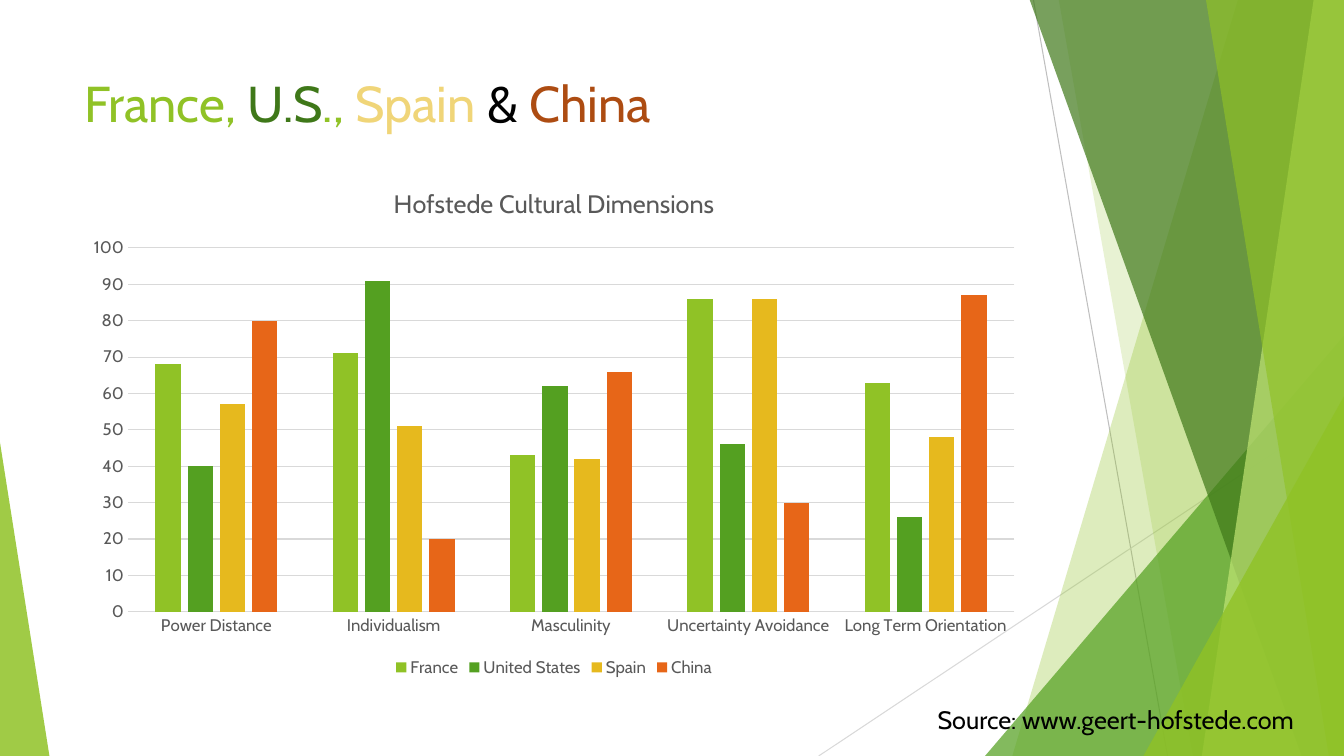
"""Build a slide comparing Hofstede cultural dimensions of four countries."""
from lxml.etree import SubElement
from pptx import Presentation
from pptx.chart.data import CategoryChartData
from pptx.dml.color import RGBColor
from pptx.enum.chart import XL_CHART_TYPE as ChartType
from pptx.enum.chart import XL_LEGEND_POSITION as LegendPosition
from pptx.enum.chart import XL_TICK_MARK as TickMark
from pptx.enum.shapes import MSO_CONNECTOR as Connector
from pptx.enum.shapes import MSO_SHAPE as Shape
from pptx.enum.text import MSO_ANCHOR as Anchor
from pptx.oxml.ns import qn
from pptx.util import Inches, Pt

FONT = "Cabin"
WIDTH, HEIGHT = 13.33, 7.5
GREEN, GRASS, FOREST = "90C226", "54A021", "3F7819"
GREY, PALE_GREY = "595959", "D9D9D9"


def rgb(value):
    return RGBColor.from_string(value)


def style_font(font, size, color):
    font.name = FONT
    font.size = Pt(size)
    font.bold = False
    font.color.rgb = rgb(color)


deck = Presentation()
deck.slide_width, deck.slide_height = Inches(WIDTH), Inches(HEIGHT)
slide = deck.slides.add_slide(deck.slide_layouts[6])
shapes = slide.shapes

hairlines = [
    (10.25, 0, 11.58, HEIGHT, "BFBFBF"),
    (WIDTH, 4.03, 8.12, HEIGHT, PALE_GREY),
]
for x1, y1, x2, y2, color in hairlines:
    hairline = shapes.add_connector(
        Connector.STRAIGHT, Inches(x1), Inches(y1), Inches(x2), Inches(y2))
    hairline.line.color.rgb = rgb(color)
    hairline.line.width = Pt(0.75)
    SubElement(hairline._element.spPr, qn("a:effectLst"))

# Sheets give top and bottom x; triangles give left, top, width and apex.
facets = [
    ("sheet", (12.28, 10.04), GREEN, 30),
    ("sheet", (10.5, 11.83), GREEN, 20),
    ("triangle", (9.77, 3.33, 3.56, 1), GRASS, 72),
    ("sheet", (10.21, 12.91), FOREST, 70),
    ("sheet", (13.03, 11.92), "C0E474", 70),
    ("sheet", (11.96, 13.18), GREEN, 65),
    ("triangle", (11.34, 3.93, 1.99, 1), GREEN, 80),
    ("triangle", (0, 4.39, 0.49, 0), GREEN, 85),
]
for kind, geometry, color, opacity in facets:
    if kind == "sheet":
        top_x, bottom_x = geometry
        outline = shapes.build_freeform(Inches(top_x), Inches(-0.01))
        corners = [(WIDTH, -0.01), (WIDTH, HEIGHT), (bottom_x, HEIGHT)]
        outline.add_line_segments([(Inches(x), Inches(y)) for x, y in corners])
        facet = outline.convert_to_shape()
    else:
        left, top, width, apex = geometry
        facet = shapes.add_shape(
            Shape.ISOSCELES_TRIANGLE, Inches(left), Inches(top),
            Inches(width), Inches(HEIGHT - top))
        facet.adjustments[0] = apex
    facet.shadow.inherit = False
    facet.fill.solid()
    facet.fill.fore_color.rgb = rgb(color)
    facet.line.fill.background()
    tint = facet._element.spPr.find(qn("a:solidFill"))[0]
    SubElement(tint, qn("a:alpha"), val=str(opacity * 1000))

captions = [
    ((0.74, 0.67, 9.4, 1.44), 36, [
        ("France, ", GREEN), ("U.S", FOREST), ("., ", GREEN),
        ("Spain ", "F0D578"), ("& ", "000000"), ("China", "AD4C12")]),
    ((9.2, 6.94, 3.99, 0.4), 18, [
        ("Source: www.geert-hofstede.com", "000000")]),
]
for box, size, pieces in captions:
    caption = shapes.add_textbox(*map(Inches, box)).text_frame
    caption.word_wrap = True
    caption.vertical_anchor = Anchor.TOP
    for text, color in pieces:
        piece = caption.paragraphs[0].add_run()
        piece.text = text
        style_font(piece.font, size, color)

scores = CategoryChartData()
scores.categories = [
    "Power Distance", "Individualism", "Masculinity",
    "Uncertainty Avoidance", "Long Term Orientation"]
countries = [
    ("France", (68, 71, 43, 86, 63), GREEN),
    ("United States", (40, 91, 62, 46, 26), GRASS),
    ("Spain", (57, 51, 42, 86, 48), "E6B91E"),
    ("China", (80, 20, 66, 30, 87), "E76618"),
]
for country, values, _ in countries:
    scores.add_series(country, values)
chart = shapes.add_chart(
    ChartType.COLUMN_CLUSTERED, Inches(0.74), Inches(1.65),
    Inches(9.51), Inches(5.11), scores).chart
style_font(chart.font, 12, GREY)

chart.has_title = True
heading = chart.chart_title.text_frame
heading.text = "Hofstede Cultural Dimensions"
style_font(heading.paragraphs[0].runs[0].font, 18, GREY)
chart.chart_title.include_in_layout = False

chart.has_legend = True
chart.legend.position = LegendPosition.BOTTOM
chart.legend.include_in_layout = False
style_font(chart.legend.font, 12, GREY)

columns = chart.plots[0]
columns.gap_width = 219
columns.overlap = -27
columns.vary_by_categories = False
for series, (_, _, color) in zip(columns.series, countries):
    series.format.fill.solid()
    series.format.fill.fore_color.rgb = rgb(color)

dimensions, scale = chart.category_axis, chart.value_axis
for axis in (dimensions, scale):
    axis.major_tick_mark = axis.minor_tick_mark = TickMark.NONE
    style_font(axis.tick_labels.font, 12, GREY)
scale.minimum_scale, scale.maximum_scale, scale.major_unit = 0, 100, 10
scale.format.line.fill.background()
for line in (dimensions.format.line, scale.major_gridlines.format.line):
    line.color.rgb = rgb(PALE_GREY)
    line.width = Pt(0.75)

deck.save("out.pptx")
